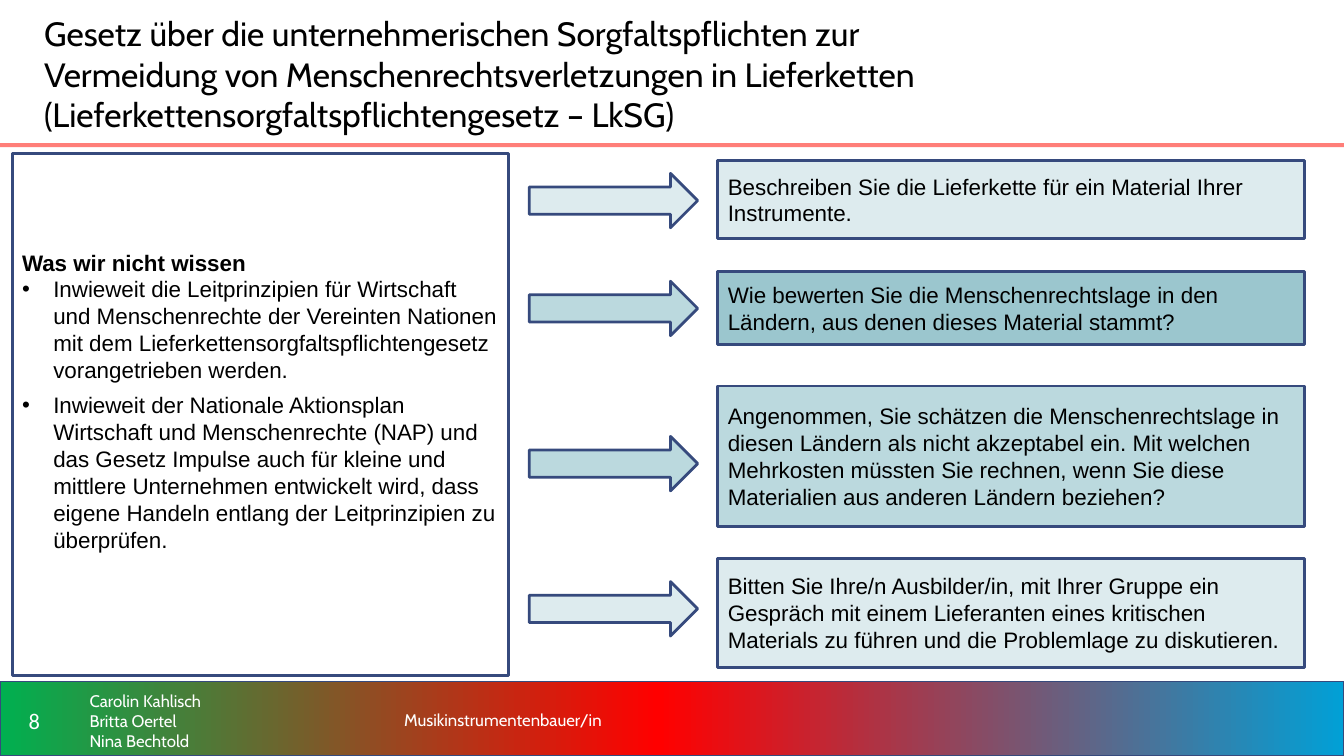
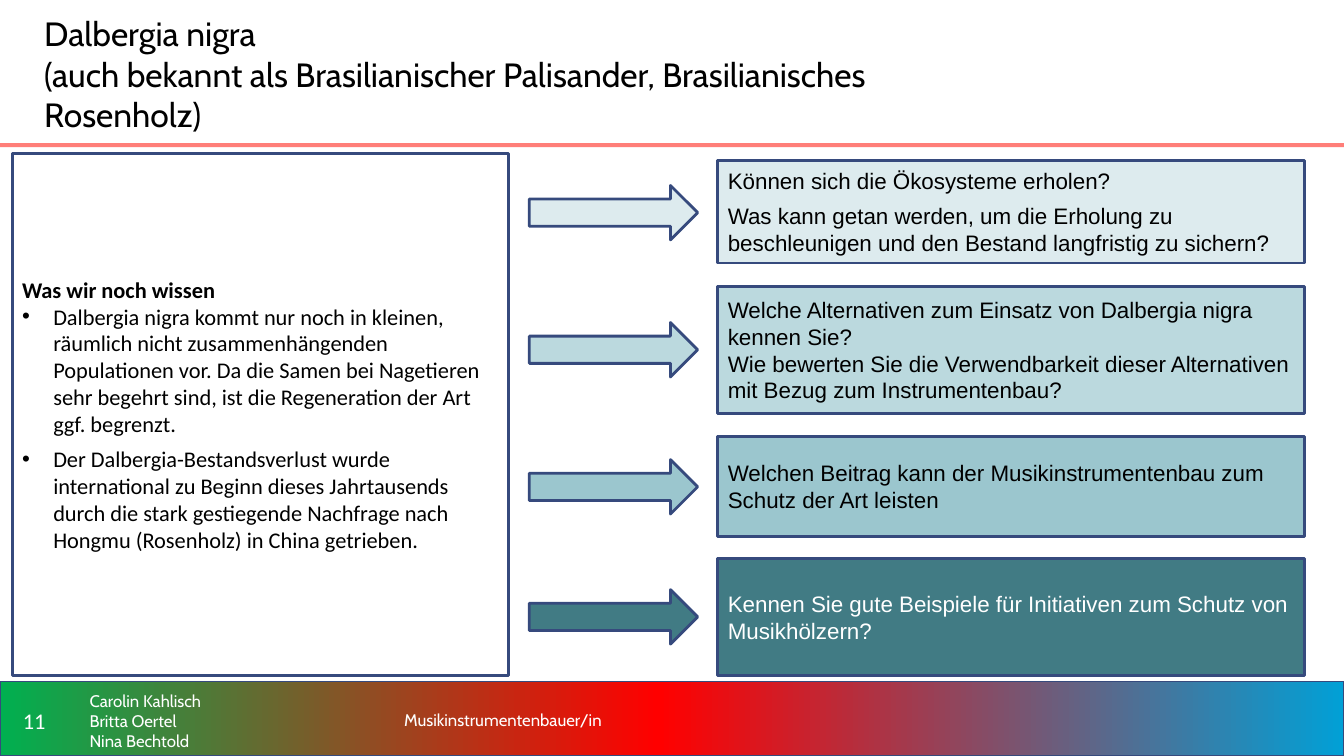
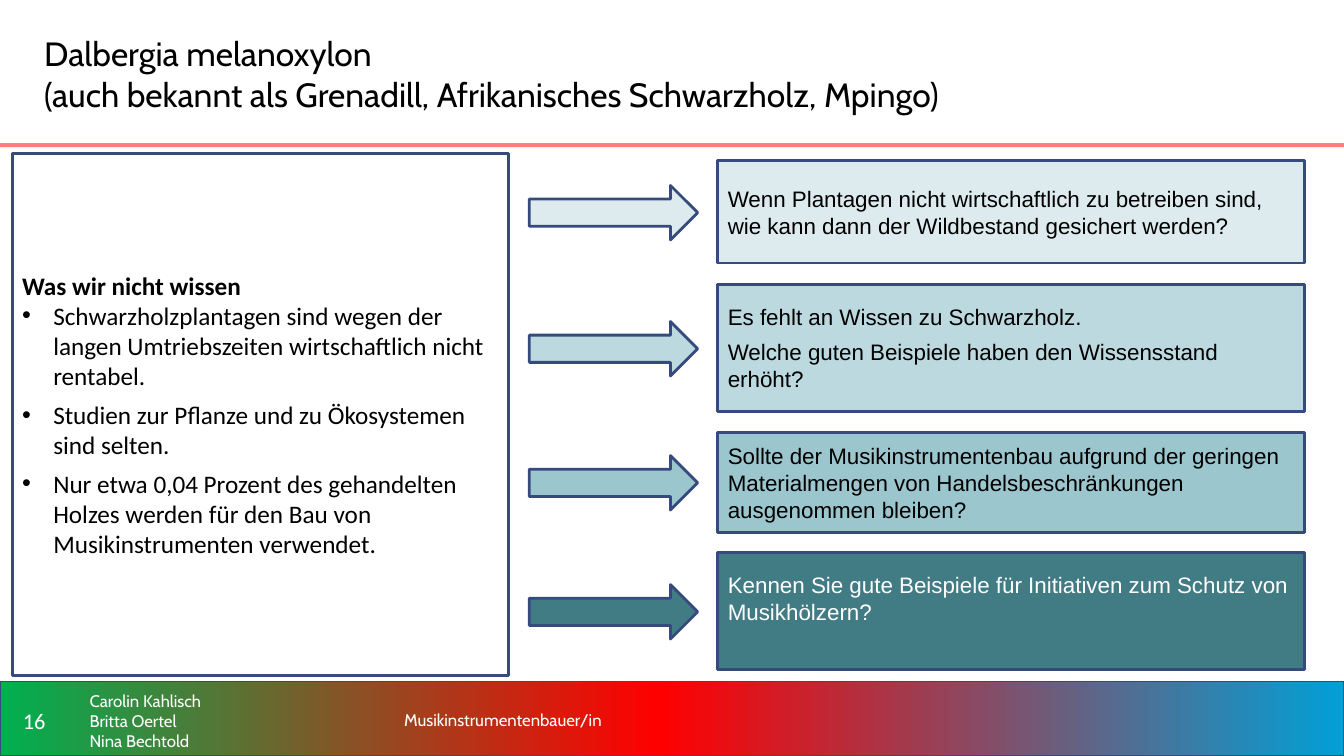
from lxml.etree import SubElement
from pptx import Presentation
from pptx.dml.color import RGBColor
from pptx.enum.shapes import MSO_SHAPE as SHAPE
from pptx.enum.text import MSO_ANCHOR as ANCHOR, PP_ALIGN as ALIGN
from pptx.oxml.ns import qn
from pptx.util import Inches, Pt

NAVY, CORAL, WHITE, BLACK = "364A7D", "FF7E79", "FFFFFF", "000000"
PALE, LIGHT, MID, DARK = "DDEBEE", "BBD9DE", "9BC6CE", "417B84"
BAND_STOPS = [(0, "00B050"), (49, "FF0000"), (100, "01A0D6")]
AUTHORS = ["Carolin Kahlisch", "Britta Oertel", "Nina Bechtold"]
BOX_LEFT, BOX_WIDTH = 7.12, 5.82
ARROW_LEFT, ARROW_WIDTH, ARROW_HEIGHT = 5.25, 1.67, 0.54


def add_block(page, kind, place, fill=None, line=None, weight=2):
    block = page.shapes.add_shape(kind, *[Inches(value) for value in place])
    block.shadow.inherit = False
    if fill:
        block.fill.solid()
        block.fill.fore_color.rgb = RGBColor.from_string(fill)
    else:
        block.fill.background()
    if line:
        block.line.color.rgb = RGBColor.from_string(line)
        block.line.width = Pt(weight)
    else:
        block.line.fill.background()
    return block


def write(box, lines, font="Arial", size=16, color=BLACK, align=ALIGN.LEFT,
          gap=0, heading=False, indent=None, bottom=0.05):
    frame = box.text_frame
    frame.word_wrap = True
    frame.vertical_anchor = ANCHOR.MIDDLE
    frame.margin_bottom = Inches(bottom)
    for index, line in enumerate(lines):
        para = frame.add_paragraph() if index else frame.paragraphs[0]
        para.text = line
        para.alignment = align
        if index > heading:
            para.space_before = Pt(gap)
        if indent:
            para._p.get_or_add_pPr().set("marL", str(Inches(indent)))
        if heading and index:
            props = para._p.get_or_add_pPr()
            props.set("marL", str(Inches(0.31)))
            props.set("indent", str(Inches(-0.31)))
            SubElement(props, qn("a:buFont"), typeface="Arial")
            SubElement(props, qn("a:buChar"), char="•")
        for span in para.runs:
            span.font.name = font
            span.font.size = Pt(size)
            span.font.bold = heading and index == 0
            span.font.color.rgb = RGBColor.from_string(color)


slides = [
    {
        "number": "8",
        "title": "Gesetz über die unternehmerischen Sorgfaltspflichten zur Vermeidung von "
                 "Menschenrechtsverletzungen in Lieferketten\v"
                 "(Lieferkettensorgfaltspflichtengesetz – LkSG)",
        "format": {"font": "Arial", "bottom": 0.32},
        "facts": [
            "Was wir nicht wissen",
            "Inwieweit die Leitprinzipien für Wirtschaft und Menschenrechte der Vereinten Nationen "
            "mit dem Lieferkettensorgfaltspflichtengesetz vorangetrieben werden.",
            "Inwieweit der Nationale Aktionsplan Wirtschaft und Menschenrechte (NAP) und das Gesetz "
            "Impulse auch für kleine und mittlere Unternehmen entwickelt wird, dass eigene Handeln "
            "entlang der Leitprinzipien zu überprüfen.",
        ],
        "questions": [
            (1.59, 0.78, 1.72, PALE, PALE, {}, [
                "Beschreiben Sie die Lieferkette für ein Material Ihrer Instrumente."]),
            (2.69, 0.73, 2.79, MID, LIGHT, {}, [
                "Wie bewerten Sie die Menschenrechtslage in den Ländern, aus denen dieses "
                "Material stammt?"]),
            (3.83, 1.39, 4.33, LIGHT, LIGHT, {}, [
                "Angenommen, Sie schätzen die Menschenrechtslage in diesen Ländern als nicht "
                "akzeptabel ein. Mit welchen Mehrkosten müssten Sie rechnen, wenn Sie diese "
                "Materialien aus anderen Ländern beziehen?"]),
            (5.54, 1.08, 5.77, PALE, PALE, {}, [
                "Bitten Sie Ihre/n Ausbilder/in, mit Ihrer Gruppe ein Gespräch mit einem "
                "Lieferanten eines kritischen Materials zu führen und die Problemlage zu "
                "diskutieren."]),
        ],
    },
    {
        "number": "11",
        "title": "Dalbergia nigra\v(auch bekannt als Brasilianischer Palisander, "
                 "Brasilianisches Rosenholz)",
        "format": {"font": "Calibri"},
        "facts": [
            "Was wir noch wissen",
            "Dalbergia nigra kommt nur noch in kleinen, räumlich nicht zusammenhängenden "
            "Populationen vor. Da die Samen bei Nagetieren sehr begehrt sind, ist die "
            "Regeneration der Art ggf. begrenzt.",
            "Der Dalbergia-Bestandsverlust wurde international zu Beginn dieses Jahrtausends "
            "durch die stark gestiegende Nachfrage nach Hongmu (Rosenholz) in China getrieben.",
        ],
        "questions": [
            (1.59, 1.02, 1.84, PALE, PALE, {"gap": 6}, [
                "Können sich die Ökosysteme erholen?",
                "Was kann getan werden, um die Erholung zu beschleunigen und den Bestand "
                "langfristig zu sichern?"]),
            (2.84, 1.26, 3.2, LIGHT, LIGHT, {}, [
                "Welche Alternativen zum Einsatz von Dalbergia nigra kennen Sie?",
                "Wie bewerten Sie die Verwendbarkeit dieser Alternativen mit Bezug zum "
                "Instrumentenbau?"]),
            (4.33, 0.99, 4.56, MID, MID, {}, [
                "Welchen Beitrag kann der Musikinstrumentenbau zum Schutz der Art leisten"]),
            (5.54, 1.16, 5.85, DARK, DARK, {"color": WHITE}, [
                "Kennen Sie gute Beispiele für Initiativen zum Schutz von Musikhölzern?"]),
        ],
    },
    {
        "number": "16",
        "title": "Dalbergia melanoxylon\v(auch bekannt als Grenadill, Afrikanisches "
                 "Schwarzholz, Mpingo)",
        "format": {"font": "Calibri", "size": 18},
        "facts": [
            "Was wir nicht wissen",
            "Schwarzholzplantagen sind wegen der langen Umtriebszeiten wirtschaftlich nicht "
            "rentabel.",
            "Studien zur Pflanze und zu Ökosystemen sind selten.",
            "Nur etwa 0,04 Prozent des gehandelten Holzes werden für den Bau von "
            "Musikinstrumenten verwendet.",
        ],
        "questions": [
            (1.59, 1.02, 1.84, PALE, PALE, {}, [
                "Wenn Plantagen nicht wirtschaftlich zu betreiben sind, wie kann dann der "
                "Wildbestand gesichert werden?"]),
            (2.82, 1.26, 3.19, LIGHT, LIGHT, {"gap": 6}, [
                "Es fehlt an Wissen zu Schwarzholz.",
                "Welche guten Beispiele haben den Wissensstand erhöht?"]),
            (4.29, 0.99, 4.52, MID, MID, {}, [
                "Sollte der Musikinstrumentenbau aufgrund der geringen Materialmengen von "
                "Handelsbeschränkungen ausgenommen bleiben?"]),
            (5.48, 1.16, 5.8, DARK, DARK, {"color": WHITE, "bottom": 0.3}, [
                "Kennen Sie gute Beispiele für Initiativen zum Schutz von Musikhölzern?"]),
        ],
    },
]

deck = Presentation()
deck.slide_width, deck.slide_height = Inches(13.33), Inches(7.5)

for slide in slides:
    page = deck.slides.add_slide(deck.slide_layouts[6])

    band = add_block(page, SHAPE.RECTANGLE, (0, 6.76, 13.33, 0.74), line=NAVY, weight=1)
    band.fill.gradient()
    band.fill.gradient_angle = 0
    stops = band._element.spPr.find(qn("a:gradFill")).find(qn("a:gsLst"))
    for stop in list(stops):
        stops.remove(stop)
    for percent, color in BAND_STOPS:
        stop = SubElement(stops, qn("a:gs"), pos=str(percent * 1000))
        SubElement(stop, qn("a:srgbClr"), val=color)
    add_block(page, SHAPE.RECTANGLE, (0, 1.42, 13.33, 0.04), fill=CORAL)

    labels = [
        ((0.34, 0.14, 9.84, 1.18), [slide["title"]], {"font": "Cabin", "size": 24}),
        ((0, 6.84, 0.68, 0.61), [slide["number"]],
         {"font": "Calibri", "color": WHITE, "align": ALIGN.CENTER}),
        ((0.79, 6.84, 2.78, 0.62), AUTHORS, {"font": "Cabin", "size": 12, "color": WHITE}),
        ((3.66, 6.84, 4.19, 0.61), ["Musikinstrumentenbauer/in"],
         {"font": "Cabin", "size": 12, "color": WHITE, "indent": 0.25}),
    ]
    for place, lines, style in labels:
        label = page.shapes.add_textbox(*[Inches(value) for value in place])
        write(label, lines, **style)

    facts = add_block(page, SHAPE.RECTANGLE, (0.12, 1.52, 4.92, 5.18), line=NAVY)
    write(facts, slide["facts"], heading=True, gap=6, **slide["format"])

    for top, height, arrow_top, fill, arrow_fill, style, lines in slide["questions"]:
        question = add_block(page, SHAPE.RECTANGLE, (BOX_LEFT, top, BOX_WIDTH, height), fill, NAVY)
        write(question, lines, **style)
        add_block(page, SHAPE.RIGHT_ARROW, (ARROW_LEFT, arrow_top, ARROW_WIDTH, ARROW_HEIGHT),
                  arrow_fill, NAVY)

deck.save("out.pptx")
